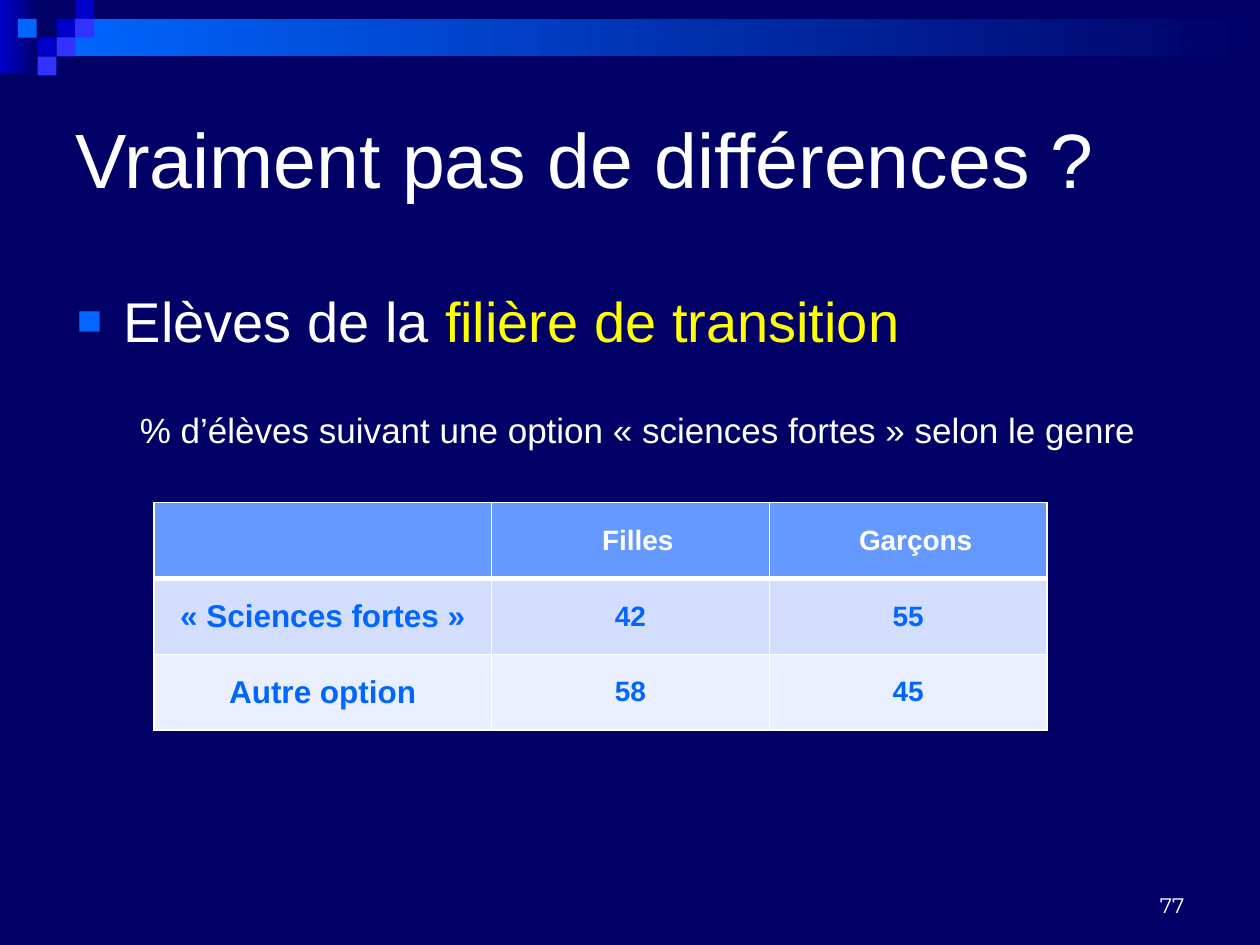
from lxml.etree import SubElement
from pptx import Presentation
from pptx.dml.color import RGBColor as RGB
from pptx.enum.shapes import MSO_SHAPE as Kind
from pptx.enum.text import MSO_ANCHOR as Anchor, PP_ALIGN as Align
from pptx.oxml.ns import qn
from pptx.util import Cm, Pt

NAVY = RGB(0, 0, 0x66)
ROYAL = RGB(0, 0, 0xCC)
AZURE = RGB(0, 0x66, 0xFF)
VIOLET = RGB(0x33, 0x33, 0xFF)
WHITE = RGB(0xFF, 0xFF, 0xFF)
YELLOW = RGB(0xFF, 0xFF, 0)
HEAD = RGB(0x66, 0x99, 0xFF)
BANDS = [RGB(0xD3, 0xDE, 0xFF), RGB(0xEA, 0xEF, 0xFF)]

TITLE = "Vraiment pas de différences ?"
LEAD = [("Elèves de la ", WHITE), ("filière de transition", YELLOW)]
CAPTION = "% d’élèves suivant une option « sciences fortes » selon le genre"
ROWS = [
    ["", "Filles", "Garçons"],
    ["« Sciences fortes »", "42", "55"],
    ["Autre option", "58", "45"],
]
WIDTHS = [6.81, 5.6, 5.6]
HEIGHT = 1.53
NUMBER = "77"

UNIT = 0.38
BARS = [
    (0, 0, 0.79, 1.47, ROYAL),
    (3 * UNIT, UNIT, 25.4 - 3 * UNIT, 2 * UNIT, AZURE),
]
SQUARES = [
    (3, 1, ROYAL), (4, 0, ROYAL), (4, 1, VIOLET), (2, 2, ROYAL),
    (0.95, 1, AZURE), (3, 2, VIOLET), (2, 3, VIOLET),
]


def add_rect(slide, x, y, w, h, color, fade=None):
    rect = slide.shapes.add_shape(Kind.RECTANGLE, Cm(x), Cm(y), Cm(w), Cm(h))
    rect.shadow.inherit = False
    rect.line.fill.background()
    if fade is None:
        rect.fill.solid()
        rect.fill.fore_color.rgb = color
        return
    rect.fill.gradient()
    rect.fill.gradient_angle = 0
    for stop, tone in zip(rect.fill.gradient_stops, (color, fade)):
        stop.color.rgb = tone


def add_box(slide, x, y, w, h, anchor):
    box = slide.shapes.add_textbox(Cm(x), Cm(y), Cm(w), Cm(h))
    frame = box.text_frame
    frame.word_wrap = True
    frame.vertical_anchor = anchor
    return frame


def style(para, size, color, bold=False, name="Arial"):
    font = para.font
    font.name, font.size, font.bold = name, Pt(size), bold
    font.color.rgb = color


def indent(para, left, first):
    props = para._p.get_or_add_pPr()
    props.set("marL", str(Cm(left)))
    props.set("indent", str(Cm(first)))
    return props


def add_bullet(props, color):
    tint = SubElement(props, qn("a:buClr"))
    SubElement(tint, qn("a:srgbClr"), val=str(color))
    SubElement(props, qn("a:buSzPct"), val="75000")
    SubElement(props, qn("a:buFont"), typeface="Arial")
    SubElement(props, qn("a:buChar"), char="■")


def add_borders(cell, low):
    props = cell._tc.get_or_add_tcPr()
    for side, width in (("L", 1), ("R", 1), ("T", 1), ("B", low)):
        line = SubElement(props, qn("a:ln" + side), w=str(Pt(width)))
        fill = SubElement(line, qn("a:solidFill"))
        SubElement(fill, qn("a:srgbClr"), val=str(WHITE))


def add_grid(slide):
    size = Cm(sum(WIDTHS)), Cm(HEIGHT * len(ROWS))
    table = slide.shapes.add_table(
        len(ROWS), len(WIDTHS), Cm(3.1), Cm(10.13), *size).table
    for col, width in zip(table.columns, WIDTHS):
        col.width = Cm(width)
    for r, row in enumerate(ROWS):
        table.rows[r].height = Cm(HEIGHT)
        for c, text in enumerate(row):
            cell = table.cell(r, c)
            add_borders(cell, 1 if r else 3)
            cell.fill.solid()
            cell.fill.fore_color.rgb = BANDS[r - 1] if r else HEAD
            cell.vertical_anchor = Anchor.MIDDLE
            cell.text = text
            para = cell.text_frame.paragraphs[0]
            para.alignment = Align.CENTER
            if r == 0 and c:
                indent(para, 0.3, 0)
            style(para, 16 if c else 18, AZURE if r else WHITE, True)


def main():
    deck = Presentation()
    deck.slide_width, deck.slide_height = Cm(25.4), Cm(19.05)
    slide = deck.slides.add_slide(deck.slide_layouts[5])
    slide.background.fill.solid()
    slide.background.fill.fore_color.rgb = NAVY

    for *place, color in BARS:
        add_rect(slide, *place, color, NAVY)
    for col, row, color in SQUARES:
        add_rect(slide, col * UNIT, row * UNIT, UNIT, UNIT, color)

    title = slide.shapes.title
    title.left, title.top = Cm(1.27), Cm(1.27)
    title.width, title.height = Cm(22.86), Cm(3.81)
    title.text = TITLE
    title.text_frame.vertical_anchor = Anchor.MIDDLE
    para = title.text_frame.paragraphs[0]
    para.alignment = Align.LEFT
    style(para, 44, WHITE)

    body = add_box(slide, 1.3, 5.66, 22.86, 10.67, Anchor.TOP)
    lead = body.paragraphs[0]
    add_bullet(indent(lead, 0.95, -0.95), AZURE)
    style(lead, 32, WHITE)
    for text, color in LEAD:
        run = lead.add_run()
        run.text = text
        run.font.color.rgb = color
    note = body.add_paragraph()
    note.text = CAPTION
    note.space_before = Pt(31)
    indent(note, 2.06, -0.79)
    style(note, 20, WHITE)

    add_grid(slide)

    page = add_box(slide, 18.2, 17.35, 5.93, 1.27, Anchor.BOTTOM).paragraphs[0]
    page.text = NUMBER
    page.alignment = Align.RIGHT
    style(page, 12, WHITE, name="Montserrat")

    deck.save("out.pptx")


if __name__ == "__main__":
    main()
